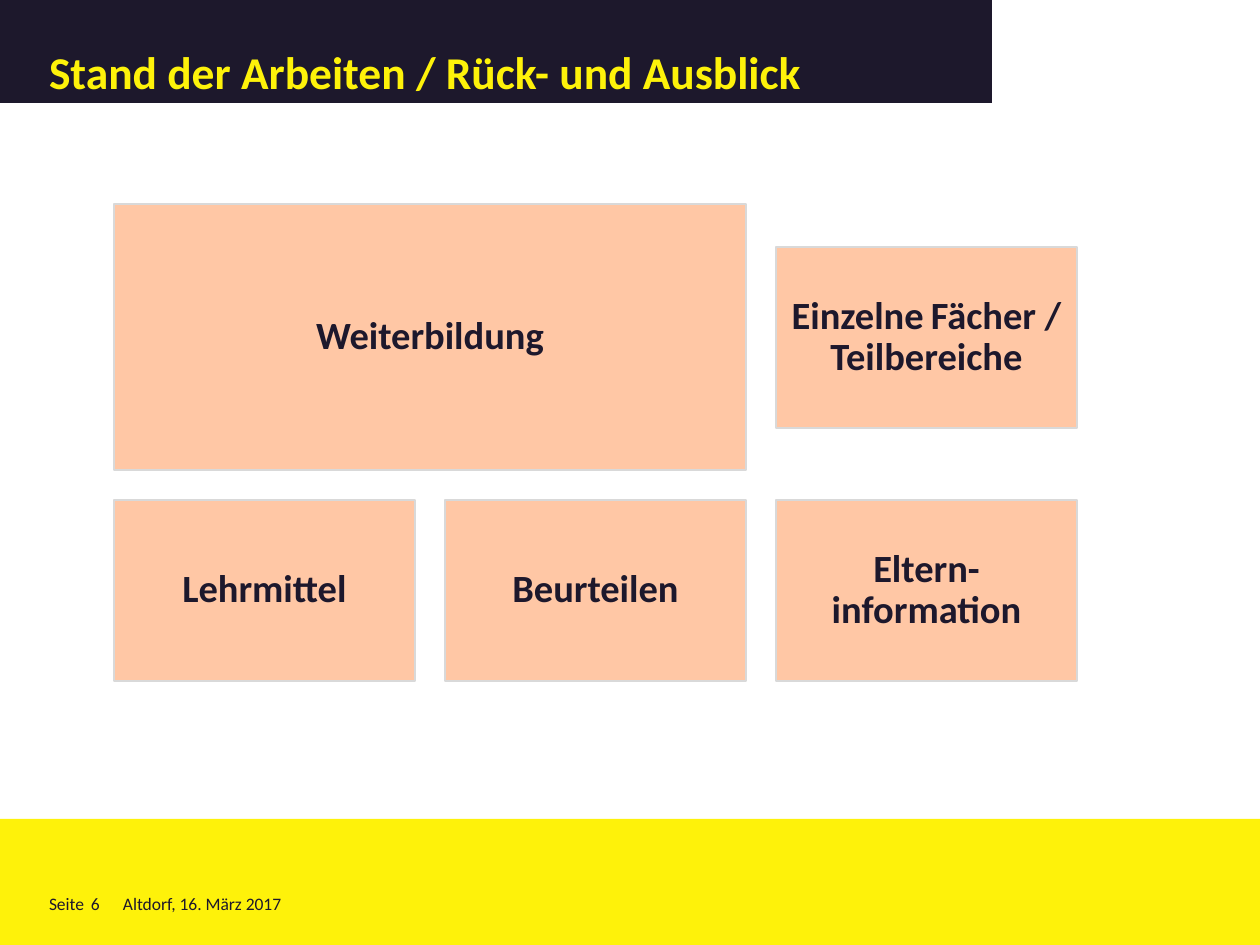
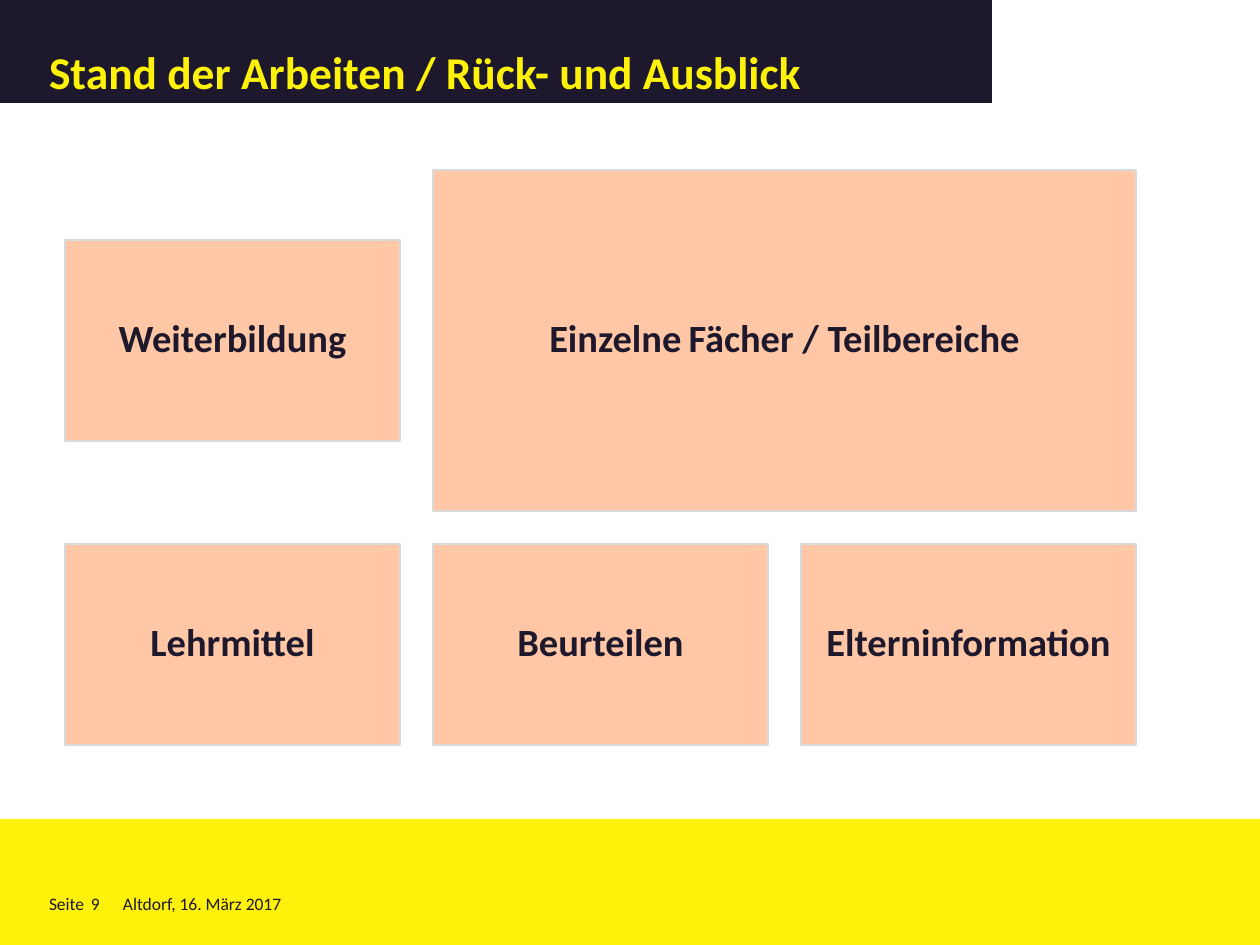
from dataclasses import dataclass
from typing import Any

from pptx import Presentation
from pptx.dml.color import RGBColor as Rgb
from pptx.enum.shapes import MSO_SHAPE as Preset
from pptx.enum.text import MSO_ANCHOR as Anchor, MSO_AUTO_SIZE as AutoSize, PP_ALIGN as Align
from pptx.slide import Slide
from pptx.util import Pt

EMU_PER_PX = 914400 / 126
TITLE_ONLY = 5


@dataclass(frozen=True)
class Theme:
    font: str = "Calibri"
    dark: Rgb = Rgb(0x1D, 0x18, 0x2C)
    yellow: Rgb = Rgb(0xFE, 0xF2, 0x0A)
    peach: Rgb = Rgb(0xFF, 0xC7, 0xA5)
    border: Rgb = Rgb(0xD9, 0xD9, 0xD9)
    title_size: int = 26
    topic_size: int = 22
    space_size: int = 18
    footer_size: int = 10


THEME = Theme()


@dataclass(frozen=True)
class Area:
    left: int
    top: int
    width: int
    height: int


@dataclass(frozen=True)
class Span:
    text: str
    size: int = THEME.topic_size
    color: Rgb = THEME.dark
    bold: bool = True


@dataclass(frozen=True)
class TextStyle:
    insets: tuple[int, int, int, int] = (0, 0, 0, 0)
    anchor: Anchor = Anchor.TOP
    align: Align = Align.LEFT
    line_spacing: float = 1.0


@dataclass(frozen=True)
class Topic:
    spans: tuple[Span, ...]
    columns: int = 1


@dataclass(frozen=True)
class TopicPage:
    number: int
    left: int
    top: int
    cell_width: int
    cell_height: int
    tall_height: int
    gap: int
    upper: tuple[Topic, ...]
    lower: tuple[Topic, ...]


TITLE = "Stand der Arbeiten / Rück- und Ausblick"
TITLE_AREA = Area(0, 0, 992, 103)
TITLE_STYLE = TextStyle((49, 10, 10, 5), Anchor.BOTTOM, Align.LEFT, 0.8)
TOPIC_STYLE = TextStyle((11, 11, 11, 11), Anchor.MIDDLE, Align.CENTER, 0.9)
FOOTER_STYLE = TextStyle()
FOOTER_BAND = Area(0, 819, 1260, 126)

TRAINING = (Span("Weiterbildung"),)
SUBJECTS = (Span("Einzelne"), Span(" ", THEME.space_size), Span("Fächer / Teilbereiche"))
MATERIALS = Topic((Span("Lehrmittel"),))
ASSESSMENT = Topic((Span("Beurteilen"),))

PAGES = (
    TopicPage(6, 114, 204, 301, 181, 266, 30,
              (Topic(TRAINING, 2), Topic(SUBJECTS)),
              (MATERIALS, ASSESSMENT, Topic((Span("Eltern-information"),)))),
    TopicPage(9, 65, 170, 335, 201, 341, 33,
              (Topic(TRAINING), Topic(SUBJECTS, 2)),
              (MATERIALS, ASSESSMENT, Topic((Span("Elterninformation"),)))),
)


def px(length: int) -> int:
    return round(length * EMU_PER_PX)


def apply(target: Any, values: dict[str, Any]) -> None:
    for name, value in values.items():
        setattr(target, name, value)


def bounds(area: Area) -> tuple[int, int, int, int]:
    return px(area.left), px(area.top), px(area.width), px(area.height)


def fill_box(box: Any, color: Rgb) -> None:
    box.fill.solid()
    box.fill.fore_color.rgb = color


def write(box: Any, spans: tuple[Span, ...], style: TextStyle) -> None:
    left, top, right, bottom = map(px, style.insets)
    frame = box.text_frame
    apply(frame, {
        "word_wrap": True, "auto_size": AutoSize.NONE, "vertical_anchor": style.anchor,
        "margin_left": left, "margin_top": top, "margin_right": right, "margin_bottom": bottom,
    })
    para = frame.paragraphs[0]
    apply(para, {"alignment": style.align, "line_spacing": style.line_spacing})
    for span in spans:
        run = para.add_run()
        run.text = span.text
        apply(run.font, {"name": THEME.font, "size": Pt(span.size), "bold": span.bold})
        run.font.color.rgb = span.color


def add_box(page: Slide, area: Area, color: Rgb) -> Any:
    box = page.shapes.add_shape(Preset.RECTANGLE, *bounds(area))
    box.shadow.inherit = False
    fill_box(box, color)
    box.line.fill.background()
    return box


def add_title(page: Slide) -> None:
    title = page.shapes.title
    apply(title, dict(zip(("left", "top", "width", "height"), bounds(TITLE_AREA))))
    fill_box(title, THEME.dark)
    write(title, (Span(TITLE, THEME.title_size, THEME.yellow),), TITLE_STYLE)


def add_footer(page: Slide, number: int) -> None:
    add_box(page, FOOTER_BAND, THEME.yellow)
    entries = ((49, 44, "Seite"), (91, 38, str(number)), (123, 287, "Altdorf, 16. März 2017"))
    for left, width, text in entries:
        box = page.shapes.add_textbox(*bounds(Area(left, 893, width, 21)))
        write(box, (Span(text, THEME.footer_size, bold=False),), FOOTER_STYLE)


def add_row(page: Slide, layout: TopicPage, topics: tuple[Topic, ...], middle: int) -> None:
    left = layout.left
    for topic in topics:
        width = topic.columns * (layout.cell_width + layout.gap) - layout.gap
        height = layout.tall_height if topic.columns > 1 else layout.cell_height
        box = add_box(page, Area(left, middle - height // 2, width, height), THEME.peach)
        box.line.color.rgb = THEME.border
        box.line.width = Pt(1)
        write(box, topic.spans, TOPIC_STYLE)
        left += width + layout.gap


def add_topic_page(deck: Any, layout: TopicPage) -> None:
    page = deck.slides.add_slide(deck.slide_layouts[TITLE_ONLY])
    add_title(page)
    add_footer(page, layout.number)
    lower_top = layout.top + layout.tall_height + layout.gap
    add_row(page, layout, layout.upper, layout.top + layout.tall_height // 2)
    add_row(page, layout, layout.lower, lower_top + layout.cell_height // 2)


def main() -> None:
    deck = Presentation()
    apply(deck, {"slide_width": px(1260), "slide_height": px(945)})
    for layout in PAGES:
        add_topic_page(deck, layout)
    deck.save("out.pptx")


if __name__ == "__main__":
    main()
